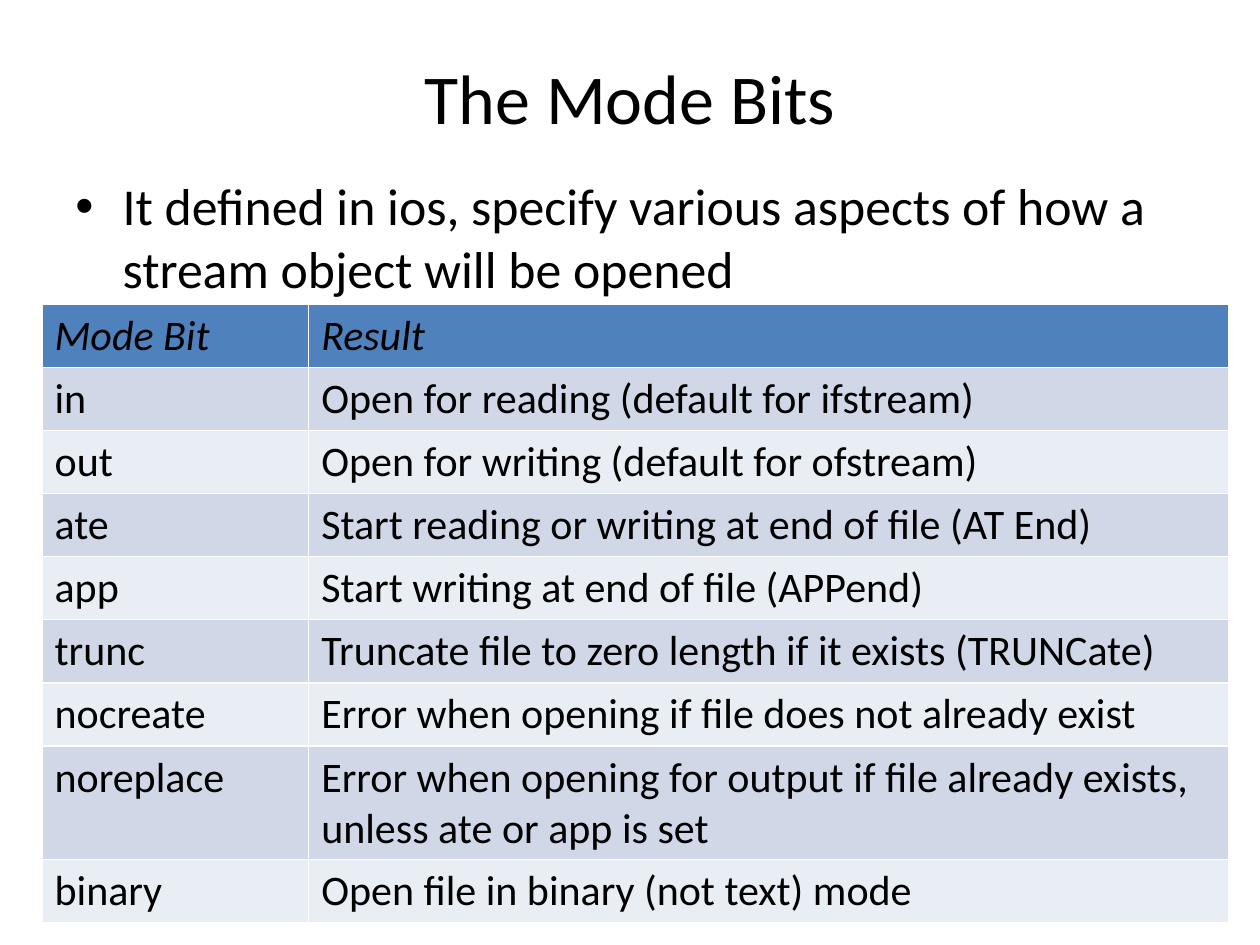
from lxml.etree import SubElement
from pptx import Presentation
from pptx.dml.color import RGBColor
from pptx.enum.text import MSO_ANCHOR, PP_ALIGN
from pptx.oxml.ns import qn
from pptx.util import Pt

TITLE = "The Mode Bits"
SUMMARY = "It defined in ios, specify various aspects of how a stream object will be opened"
MODES = [
    ("Mode Bit", "Result"),
    ("in", "Open for reading (default for ifstream)"),
    ("out", "Open for writing (default for ofstream)"),
    ("ate", "Start reading or writing at end of file (AT End)"),
    ("app", "Start writing at end of file (APPend)"),
    ("trunc", "Truncate file to zero length if it exists (TRUNCate)"),
    ("nocreate", "Error when opening if file does not already exist"),
    ("noreplace", "Error when opening for output if file already exists, unless ate or app is set"),
    ("binary", "Open file in binary (not text) mode"),
]
COLORS = {"text": "000000", "header": "4F81BD", "odd": "D0D8E8", "even": "E9EDF4"}
FONT = "Calibri"
COLUMN_WIDTHS = (152.4, 525.6)
ROW_HEIGHT = 29.2
BULLET_INDENT = 27


def add_text(paragraph, text, size, italic=False):
    run = paragraph.add_run()
    run.text = text
    run.font.name = FONT
    run.font.size = Pt(size)
    run.font.bold = False
    run.font.italic = italic
    run.font.color.rgb = RGBColor.from_string(COLORS["text"])


def add_bullet(paragraph):
    properties = paragraph._p.get_or_add_pPr()
    properties.set("marL", str(Pt(BULLET_INDENT)))
    properties.set("indent", str(-Pt(BULLET_INDENT)))
    SubElement(properties, qn("a:buFont")).set("typeface", "Arial")
    SubElement(properties, qn("a:buChar")).set("char", "•")


def row_color(row):
    if row == 0:
        return COLORS["header"]
    return COLORS["odd" if row % 2 else "even"]


deck = Presentation()
deck.slide_width, deck.slide_height = Pt(720), Pt(540)
slide = deck.slides.add_slide(deck.slide_layouts[5])

title = slide.shapes.title
title.left, title.top, title.width, title.height = Pt(36), Pt(27), Pt(648), Pt(56.4)
title.text_frame.vertical_anchor = MSO_ANCHOR.MIDDLE
heading = title.text_frame.paragraphs[0]
heading.alignment = PP_ALIGN.CENTER
add_text(heading, TITLE, 40)

summary = slide.shapes.add_textbox(Pt(36), Pt(96), Pt(648), Pt(72)).text_frame
summary.word_wrap = True
point = summary.paragraphs[0]
point.space_before = Pt(4)
add_bullet(point)
add_text(point, SUMMARY, 29.6)

mode_table = slide.shapes.add_table(
    len(MODES), len(COLUMN_WIDTHS), Pt(24), Pt(174),
    Pt(sum(COLUMN_WIDTHS)), Pt(ROW_HEIGHT * len(MODES))).table
for column, width in zip(mode_table.columns, COLUMN_WIDTHS):
    column.width = Pt(width)
for row, entries in enumerate(MODES):
    mode_table.rows[row].height = Pt(ROW_HEIGHT)
    for col, entry in enumerate(entries):
        cell = mode_table.cell(row, col)
        cell.fill.solid()
        cell.fill.fore_color.rgb = RGBColor.from_string(row_color(row))
        add_text(cell.text_frame.paragraphs[0], entry, 24, italic=row == 0)

deck.save("out.pptx")
